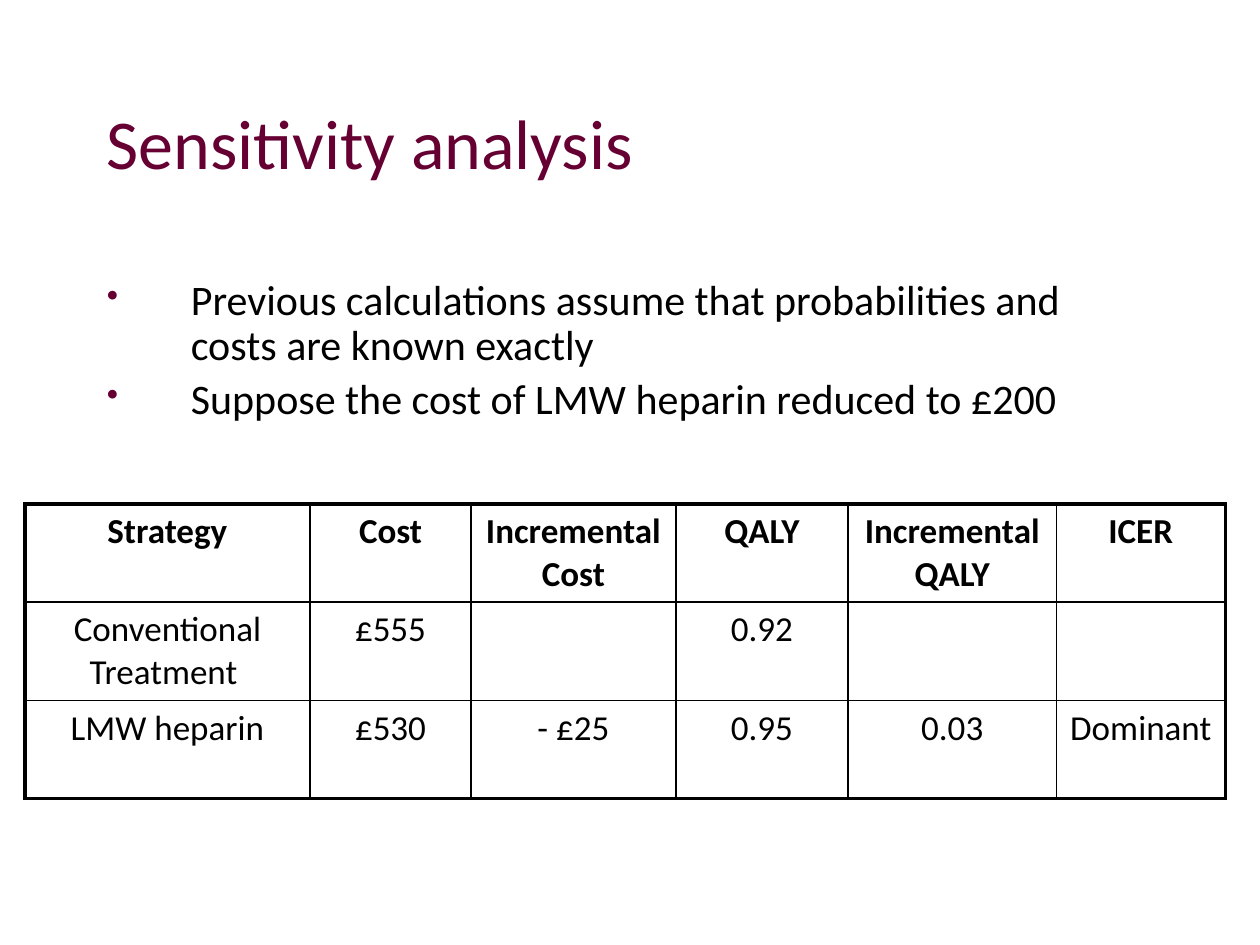
from lxml.etree import SubElement
from pptx import Presentation
from pptx.dml.color import RGBColor
from pptx.enum.text import MSO_ANCHOR, PP_ALIGN
from pptx.oxml.ns import qn
from pptx.util import Pt

FONT = "Calibri"
PLUM, BLACK = "660033", "000000"
THIN, THICK = 1, 2.25

BULLETS = [
    "Previous calculations assume that probabilities and costs are known exactly",
    "Suppose the cost of LMW heparin reduced to £200",
]
COLUMN_WIDTHS = [163, 92, 117, 98.5, 119, 96.5]
ROW_HEIGHT = 56.1
ROWS = [
    ["Strategy", "Cost", "Incremental Cost", "QALY", "Incremental QALY", "ICER"],
    ["Conventional Treatment ", "£555", "", "0.92", "", ""],
    ["LMW heparin", "£530", "- £25", "0.95", "0.03", "Dominant"],
]


def color(value):
    """Turn a hex string into a colour."""
    return RGBColor.from_string(value)


def style(para, size, value, bold=False):
    """Set the font of a paragraph."""
    font = para.font
    font.name, font.size, font.bold = FONT, Pt(size), bold
    font.color.rgb = color(value)


def add_box(page, left, top, width, height):
    """Add a wrapping text box and return its text frame."""
    frame = page.shapes.add_textbox(Pt(left), Pt(top), Pt(width), Pt(height)).text_frame
    frame.word_wrap = True
    return frame


def add_title(page, left, top, width, height):
    """Place the vertically centred heading."""
    frame = add_box(page, left, top, width, height)
    frame.vertical_anchor = MSO_ANCHOR.MIDDLE
    para = frame.paragraphs[0]
    para.text = "Sensitivity analysis"
    style(para, 40, PLUM)


def add_bullet(para, indent):
    """Give a paragraph a small plum bullet with a hanging indent."""
    props = para._p.get_or_add_pPr()
    props.set("marL", str(Pt(indent)))
    props.set("indent", str(Pt(-indent)))
    bullet_color = SubElement(props, qn("a:buClr"))
    SubElement(bullet_color, qn("a:srgbClr"), val=PLUM)
    SubElement(props, qn("a:buSzPct"), val="80000")
    SubElement(props, qn("a:buChar"), char="•")


def add_bullets(page, left, top, width, height):
    """Place the list of assumptions."""
    frame = add_box(page, left, top, width, height)
    for index, text in enumerate(BULLETS):
        para = frame.paragraphs[0] if index == 0 else frame.add_paragraph()
        para.text = text
        add_bullet(para, 48)
        para.line_spacing = 0.9
        if index:
            para.space_before = Pt(4.8)
        style(para, 24, BLACK)


def set_borders(cell, widths):
    """Draw the left, right, top and bottom borders of a cell."""
    props = cell._tc.get_or_add_tcPr()
    for index, (side, width) in enumerate(zip("LRTB", widths)):
        line = props.makeelement(qn(f"a:ln{side}"), {"w": str(Pt(width))})
        fill = SubElement(line, qn("a:solidFill"))
        SubElement(fill, qn("a:srgbClr"), val=BLACK)
        props.insert(index, line)


def add_results(page, left, top):
    """Place the cost-effectiveness table with a thick outer frame."""
    last_row, last_column = len(ROWS) - 1, len(COLUMN_WIDTHS) - 1
    table = page.shapes.add_table(
        len(ROWS), len(COLUMN_WIDTHS), Pt(left), Pt(top),
        Pt(sum(COLUMN_WIDTHS)), Pt(ROW_HEIGHT * len(ROWS)),
    ).table
    for column, width in zip(table.columns, COLUMN_WIDTHS):
        column.width = Pt(width)
    for r, texts in enumerate(ROWS):
        table.rows[r].height = Pt(ROW_HEIGHT)
        for c, text in enumerate(texts):
            cell = table.cell(r, c)
            cell.fill.background()
            outer = (c == 0, c == last_column, r == 0, r == last_row)
            set_borders(cell, [THICK if edge else THIN for edge in outer])
            para = cell.text_frame.paragraphs[0]
            para.text = text
            para.alignment = PP_ALIGN.CENTER
            style(para, 20, BLACK, bold=r == 0)


def main():
    """Build the slide and save it."""
    deck = Presentation()
    deck.slide_width, deck.slide_height = Pt(720), Pt(540)
    page = deck.slides.add_slide(deck.slide_layouts[6])
    add_title(page, 54, 36, 612, 90)
    add_bullets(page, 54, 156, 595.5, 111.5)
    add_results(page, 14.2, 288)
    deck.save("out.pptx")


if __name__ == "__main__":
    main()
